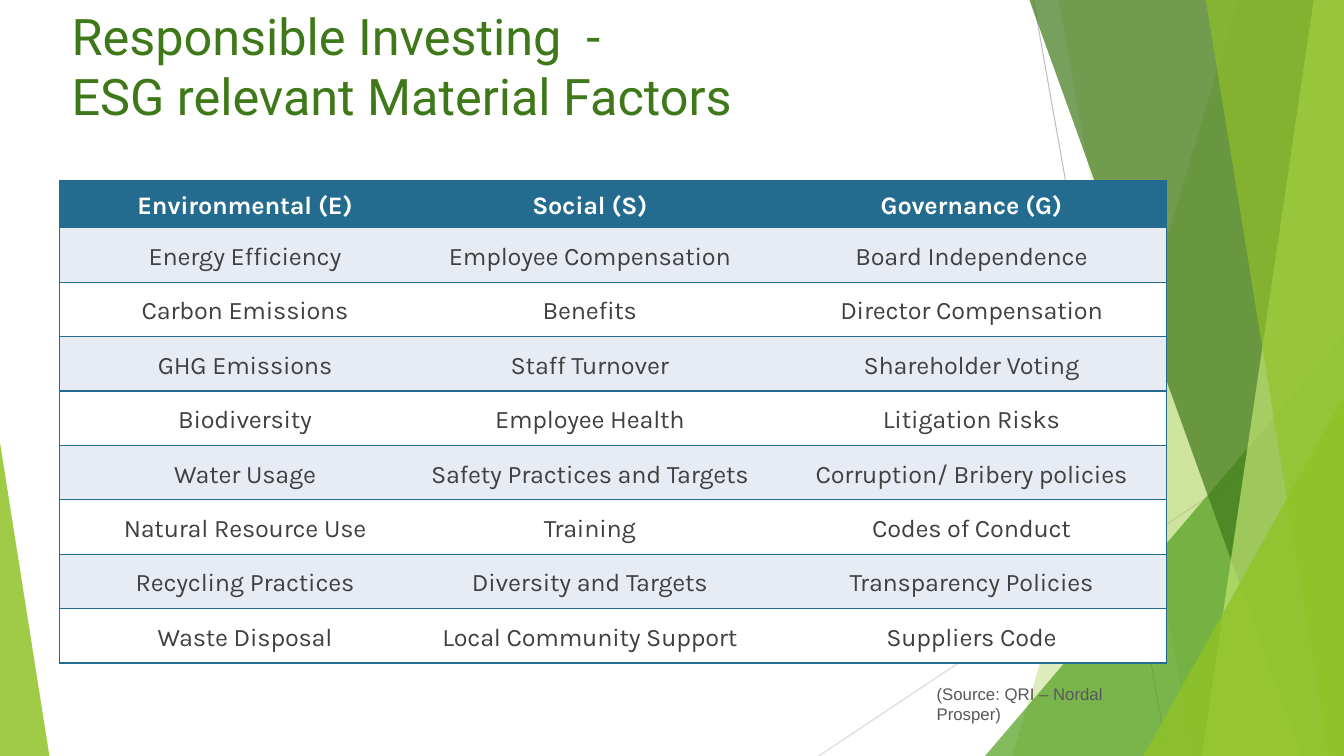
from lxml.etree import SubElement
from pptx import Presentation
from pptx.dml.color import RGBColor
from pptx.enum.shapes import MSO_CONNECTOR, MSO_SHAPE
from pptx.enum.text import MSO_ANCHOR, MSO_AUTO_SIZE, PP_ALIGN
from pptx.oxml import parse_xml
from pptx.oxml.ns import nsdecls, qn
from pptx.util import Inches, Pt

W, H = Inches(13.33), Inches(7.5)
COLORS = {
    "title": "3F7819", "lime": "90C226", "green": "54A021", "forest": "3F7819",
    "pale": "C0E474", "ray": "BFBFBF", "ray_light": "D9D9D9", "header": "246C8F",
    "band": "E7EBF4", "white": "FFFFFF", "body": "404040", "source": "57585B",
}
FACTORS = [
    ("Environmental (E)", "Social (S)", "Governance (G)"),
    ("Energy Efficiency", "Employee Compensation", "Board Independence"),
    ("Carbon Emissions", "Benefits", "Director Compensation"),
    ("GHG Emissions", "Staff Turnover", "Shareholder Voting"),
    ("Biodiversity", "Employee Health", "Litigation Risks"),
    ("Water Usage", "Safety Practices and Targets", "Corruption/ Bribery policies"),
    ("Natural Resource Use", "Training", "Codes of Conduct"),
    ("Recycling Practices", "Diversity and Targets", "Transparency Policies"),
    ("Waste Disposal", "Local Community Support", "Suppliers Code"),
]
COLUMN_WIDTHS = (3.38, 3.73, 3.87)
COLUMN_INDENTS = (0.3, 0.03, 0)
HEADER_HEIGHT, ROW_HEIGHT = 0.47, 0.54


def rgb(name):
    return RGBColor.from_string(COLORS[name])


def style_runs(p, font, size, color, bold=False, spacing=0):
    for r in p.runs:
        r.font.name, r.font.size, r.font.bold = font, Pt(size), bold
        r.font.color.rgb = rgb(color)
        if spacing:
            r._r.get_or_add_rPr().set("spc", str(spacing))


def set_margins(box, left, top):
    box.margin_left, box.margin_top = Inches(left), Inches(top)
    box.margin_right = box.margin_bottom = 0


def fill_translucent(sp, color, opacity):
    sp.shadow.inherit = False
    sp.line.fill.background()
    sp.fill.solid()
    sp.fill.fore_color.rgb = rgb(color)
    clr = sp._element.spPr.find(qn("a:solidFill"))[0]
    SubElement(clr, qn("a:alpha")).set("val", str(opacity * 1000))


def add_ray(s, x1, y1, x2, y2, color):
    ray = s.shapes.add_connector(
        MSO_CONNECTOR.STRAIGHT, Inches(x1), Inches(y1), Inches(x2), Inches(y2))
    ray.line.color.rgb = rgb(color)
    ray.line.width = Pt(0.75)
    SubElement(ray._element.spPr, qn("a:effectLst"))


def add_facet(s, top_x, bottom_x, color, opacity):
    """Full-height panel with a slanted left edge, reaching the right slide edge."""
    builder = s.shapes.build_freeform(Inches(top_x), 0)
    builder.add_line_segments([(W, 0), (W, H), (Inches(bottom_x), H)], close=True)
    fill_translucent(builder.convert_to_shape(), color, opacity)


def add_corner(s, left, width, height, apex, color, opacity):
    """Right triangle standing on the bottom slide edge."""
    sp = s.shapes.add_shape(
        MSO_SHAPE.ISOSCELES_TRIANGLE, Inches(left), H - Inches(height),
        Inches(width), Inches(height))
    sp.adjustments[0] = apex
    fill_translucent(sp, color, opacity)


def add_backdrop(s):
    add_ray(s, 10.25, 0, 11.58, 7.5, "ray")
    add_ray(s, 13.33, 4.03, 8.12, 7.5, "ray_light")
    add_facet(s, 12.28, 10.04, "lime", 30)
    add_facet(s, 10.5, 11.83, "lime", 20)
    add_corner(s, 9.77, 3.56, 4.17, 1, "green", 72)
    add_facet(s, 10.21, 12.91, "forest", 70)
    add_facet(s, 13.03, 11.92, "pale", 70)
    add_facet(s, 11.96, 13.18, "lime", 65)
    add_corner(s, 11.34, 1.99, 3.57, 1, "lime", 80)
    add_corner(s, 0, 0.49, 3.11, 0, "lime", 85)


def add_title(s, left, top, width, height):
    title = s.shapes.title
    title.left, title.top = Inches(left), Inches(top)
    title.width, title.height = Inches(width), Inches(height)
    tf = title.text_frame
    tf.text = "Responsible Investing  -\vESG relevant Material Factors"
    tf.word_wrap, tf.auto_size = True, MSO_AUTO_SIZE.NONE
    tf.vertical_anchor = MSO_ANCHOR.TOP
    set_margins(tf, 0.71, 0.05)
    p = tf.paragraphs[0]
    p.alignment = PP_ALIGN.LEFT
    style_runs(p, "Roboto", 36, "title")


def set_borders(cell, sides):
    """Draw the named sides (of L, R, T, B) and clear the others."""
    tcPr = cell._tc.get_or_add_tcPr()
    for i, side in enumerate("LRTB"):
        paint = "<a:noFill/>"
        if side in sides:
            paint = f'<a:solidFill><a:srgbClr val="{COLORS["header"]}"/></a:solidFill>'
        tcPr.insert(i, parse_xml(
            f'<a:ln{side} {nsdecls("a")} w="12700">{paint}</a:ln{side}>'))


def format_cell(cell, row, col):
    set_margins(cell, COLUMN_INDENTS[col], 0.04)
    cell.vertical_anchor = MSO_ANCHOR.MIDDLE
    fill = "header" if row == 0 else "band" if row % 2 else "white"
    cell.fill.solid()
    cell.fill.fore_color.rgb = rgb(fill)
    p = cell.text_frame.paragraphs[0]
    p.alignment = PP_ALIGN.CENTER
    p.space_before = p.space_after = Pt(6)
    style_runs(p, "Karla", 18, "body" if row else "white", bold=row == 0, spacing=-15)
    set_borders(cell, "TB" + {0: "L", len(COLUMN_WIDTHS) - 1: "R"}.get(col, ""))


def add_factor_table(s, left, top):
    heights = [HEADER_HEIGHT] + [ROW_HEIGHT] * (len(FACTORS) - 1)
    table = s.shapes.add_table(
        len(FACTORS), len(COLUMN_WIDTHS), Inches(left), Inches(top),
        Inches(sum(COLUMN_WIDTHS)), Inches(sum(heights))).table
    table.first_row = table.horz_banding = False
    for column, width in zip(table.columns, COLUMN_WIDTHS):
        column.width = Inches(width)
    for i, (row, height) in enumerate(zip(table.rows, heights)):
        row.height = Inches(height)
        for j, cell in enumerate(row.cells):
            cell.text = FACTORS[i][j]
            format_cell(cell, i, j)


def add_source(s, left, top, width, height):
    tf = s.shapes.add_textbox(
        Inches(left), Inches(top), Inches(width), Inches(height)).text_frame
    tf.text = "(Source: QRI – Nordal\vProsper)"
    tf.word_wrap = True
    set_margins(tf, 0.01, 0.01)
    p = tf.paragraphs[0]
    p.space_before = Pt(1)
    style_runs(p, "Arial", 12, "source")


def main():
    prs = Presentation()
    prs.slide_width, prs.slide_height = W, H
    s = prs.slides.add_slide(prs.slide_layouts[5])
    add_backdrop(s)
    add_title(s, 0, 0, 10.24, 1.26)
    add_factor_table(s, 0.59, 1.79)
    add_source(s, 9.28, 6.77, 2.3, 0.4)
    prs.save("out.pptx")


if __name__ == "__main__":
    main()
